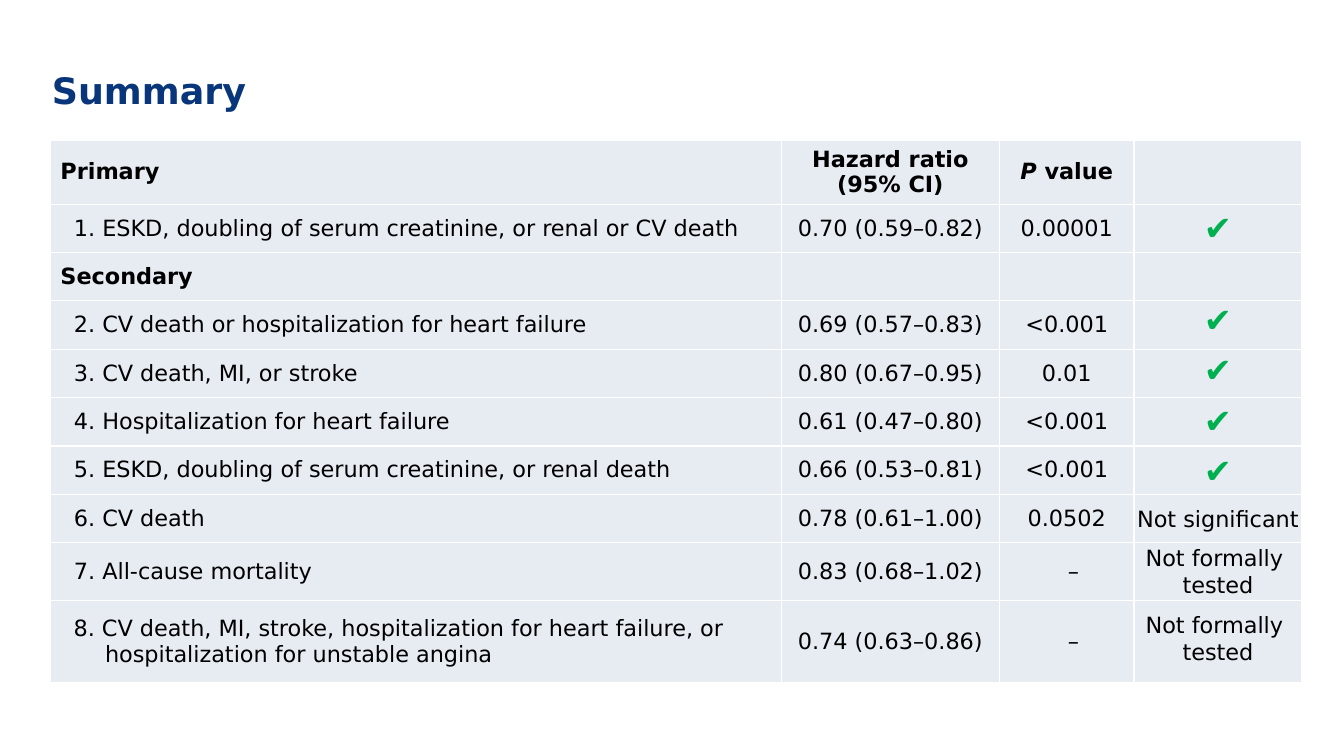
import pptx
import pptx.dml.color
import pptx.enum.text
import pptx.oxml
import pptx.oxml.ns
import pptx.util
import lxml.etree

NAVY = pptx.dml.color.RGBColor(0x09, 0x35, 0x7A)
BLACK = pptx.dml.color.RGBColor(0, 0, 0)
WHITE = pptx.dml.color.RGBColor(0xFF, 0xFF, 0xFF)
GREEN = pptx.dml.color.RGBColor(0, 0xB0, 0x50)
PALE = pptx.dml.color.RGBColor(0xE7, 0xEC, 0xF3)

ALIGN = pptx.enum.text.PP_ALIGN
ANCHOR = pptx.enum.text.MSO_ANCHOR
GRID_COLUMNS, GRID_ROWS = 80, 45
UNIT = pptx.util.Inches(7.5) / GRID_ROWS

BODY = {"name": "DejaVu Sans", "size": pptx.util.Pt(16), "bold": False}
HEAD = {**BODY, "bold": True}
TITLE = {**HEAD, "size": pptx.util.Pt(26)}
TICK = {**BODY, "size": pptx.util.Pt(24)}

COLUMN_WIDTHS = [43.5, 13, 8, 10]
ROW_HEIGHTS = [3.7] + [2.88] * 7 + [3.43, 4.92]
OUTCOMES = [
    ("Primary", "Hazard ratio (95% CI)", "P value"),
    ("1. ESKD, doubling of serum creatinine, or renal or CV death", "0.70 (0.59–0.82)", "0.00001"),
    ("Secondary", "", ""),
    ("2. CV death or hospitalization for heart failure", "0.69 (0.57–0.83)", "<0.001"),
    ("3. CV death, MI, or stroke", "0.80 (0.67–0.95)", "0.01"),
    ("4. Hospitalization for heart failure", "0.61 (0.47–0.80)", "<0.001"),
    ("5. ESKD, doubling of serum creatinine, or renal death", "0.66 (0.53–0.81)", "<0.001"),
    ("6. CV death", "0.78 (0.61–1.00)", "0.0502"),
    ("7. All-cause mortality", "0.83 (0.68–1.02)", "–"),
    ("8. CV death, MI, stroke, hospitalization for heart failure, or "
     "hospitalization for unstable angina", "0.74 (0.63–0.86)", "–"),
]
HEADING_ROWS = (0, 2)
TICK_TOPS = [3.65] + [9.15 + 3 * step for step in range(4)]
VERDICTS = [
    (21.4, 10.9, 2.2, ["Not significant"]),
    (23.75, 10, 3.85, ["Not formally ", "tested"]),
    (27.75, 10, 3.85, ["Not formally ", "tested"]),
]


def grid(count):
    """Turn a count of grid units into a length."""
    return pptx.util.Emu(round(count * UNIT))


def add_span(para, words, style, colour):
    """Add styled words to a paragraph."""
    span = para.add_run()
    span.text = words
    for name, value in style.items():
        setattr(span.font, name, value)
    span.font.color.rgb = colour
    return span


def add_label(page, box, lines, style, colour, align, wrap=False):
    """Place lines of text in a box given as left, top, width, height."""
    frame = page.shapes.add_textbox(*map(grid, box)).text_frame
    frame.word_wrap = wrap
    frame.vertical_anchor = ANCHOR.BOTTOM if wrap else ANCHOR.TOP
    for index, line in enumerate(lines):
        para = frame.add_paragraph() if index else frame.paragraphs[0]
        para.alignment = align
        add_span(para, line, style, colour)


def dress_cell(cell):
    """Give a cell its fill, middle anchor and thin white borders."""
    cell.vertical_anchor = ANCHOR.MIDDLE
    cell.fill.solid()
    cell.fill.fore_color.rgb = PALE
    properties = cell._tc.get_or_add_tcPr()
    for index, side in enumerate(("lnL", "lnR", "lnT", "lnB")):
        border = lxml.etree.Element(pptx.oxml.ns.qn("a:" + side), w=str(pptx.util.Pt(1)))
        fill = lxml.etree.SubElement(border, pptx.oxml.ns.qn("a:solidFill"))
        lxml.etree.SubElement(fill, pptx.oxml.ns.qn("a:srgbClr"), val=str(WHITE))
        properties.insert(index, border)


def indent(para, margin, first):
    """Set the left margin and first-line indent of a paragraph."""
    properties = para._p.get_or_add_pPr()
    properties.set("marL", str(grid(margin)))
    properties.set("indent", str(grid(first)))


def fill_cell(cell, words, row, column):
    """Write one entry of the outcomes table."""
    para = cell.text_frame.paragraphs[0]
    style = HEAD if row in HEADING_ROWS else BODY
    if column:
        para.alignment = ALIGN.CENTER
    if words == "–":
        indent(para, 0.8, 0)
    elif column == 0 and row not in HEADING_ROWS:
        indent(para, *((2.65, -1.87) if row == len(OUTCOMES) - 1 else (0.8, 0)))
    if words == "P value":
        add_span(para, "P ", {**style, "italic": True}, BLACK)
        words = "value"
    add_span(para, words, style, BLACK)


def add_outcomes(page, left, top):
    """Build the outcomes table from its top left corner."""
    table = page.shapes.add_table(
        len(ROW_HEIGHTS), len(COLUMN_WIDTHS), grid(left), grid(top),
        grid(sum(COLUMN_WIDTHS)), grid(sum(ROW_HEIGHTS))).table
    table.first_row = table.horz_banding = False
    for column, width in zip(table.columns, COLUMN_WIDTHS):
        column.width = grid(width)
    for row, height in zip(table.rows, ROW_HEIGHTS):
        row.height = grid(height)
    for cell in table.iter_cells():
        dress_cell(cell)
    for row, entries in enumerate(OUTCOMES):
        for column, words in enumerate(entries):
            if words:
                fill_cell(table.cell(row, column), words, row, column)


def add_verdicts(page, left, top):
    """Place ticks and remarks centred over the last table column."""
    middle = left + sum(COLUMN_WIDTHS) - COLUMN_WIDTHS[-1] / 2
    ticks = [(offset, 3.25, 3, ["✔"]) for offset in TICK_TOPS]
    for entries, style, colour in ((VERDICTS, BODY, BLACK), (ticks, TICK, GREEN)):
        for offset, width, height, lines in entries:
            box = (middle - width / 2, top + offset, width, height)
            add_label(page, box, lines, style, colour, ALIGN.CENTER)


def main():
    """Build and save the summary slide."""
    deck = pptx.Presentation()
    deck.slide_width, deck.slide_height = grid(GRID_COLUMNS), grid(GRID_ROWS)
    page = deck.slides.add_slide(deck.slide_layouts[6])
    add_label(page, (2.5, 3.7, 75, 3.25), ["Summary"], TITLE, NAVY, ALIGN.LEFT, wrap=True)
    add_outcomes(page, 3, 8.35)
    add_verdicts(page, 3, 8.35)
    deck.save("out.pptx")


if __name__ == "__main__":
    main()
